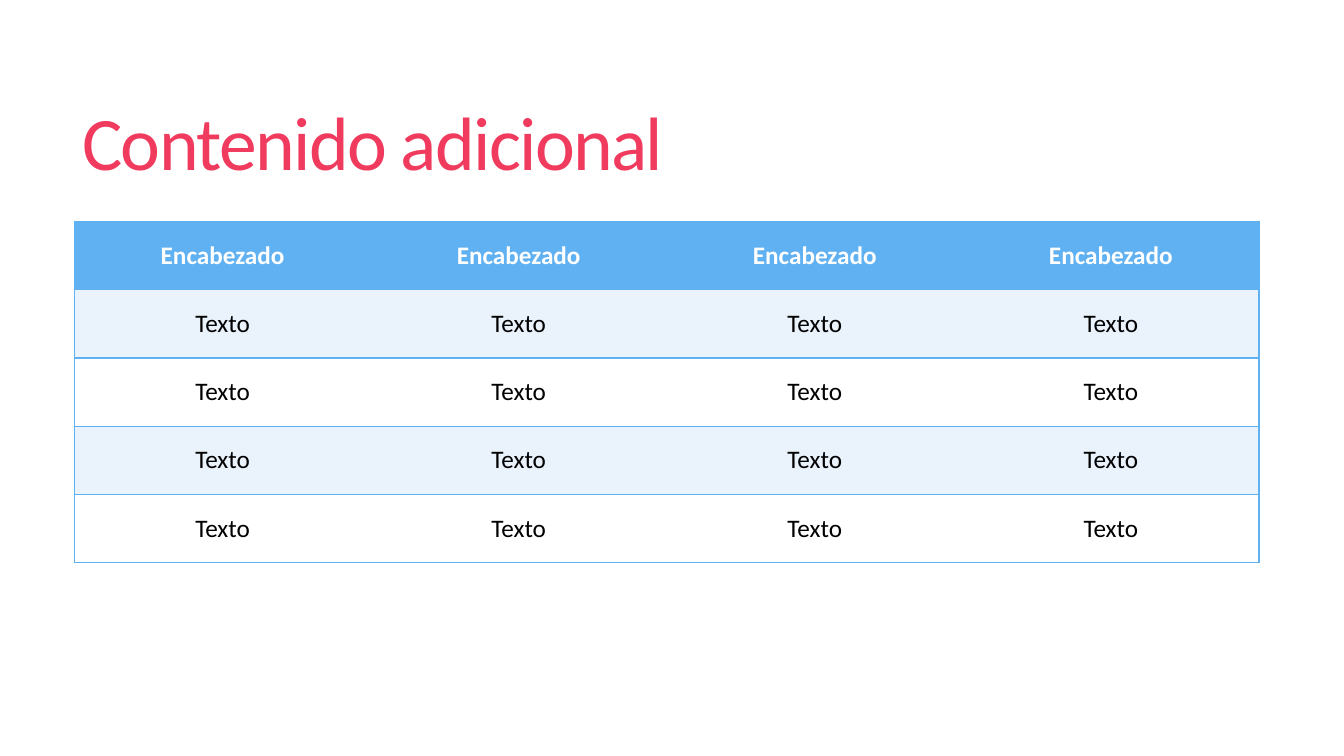
"""Build a slide with a title and a banded four-column table."""
from dataclasses import dataclass

from lxml.etree import SubElement
from pptx import Presentation
from pptx.dml.color import RGBColor
from pptx.enum.text import MSO_ANCHOR as Anchor, PP_ALIGN as Align
from pptx.oxml.ns import qn
from pptx.slide import Slide
from pptx.table import _Cell as Cell
from pptx.text.text import _Paragraph as Paragraph
from pptx.util import Emu, Pt

PX = 9525
FONT = "Calibri"
COLORS = {
    "title": "F03B5E",
    "header": "60B1F2",
    "band": "EAF2FC",
    "white": "FFFFFF",
    "black": "000000",
}
COLS = 4
COL_W, ROW_H = 282, 65


@dataclass(frozen=True)
class RowStyle:
    text: str
    fill: str
    color: str
    bold: bool = False


ROWS = [RowStyle("Encabezado", "header", "white", True)] + [
    RowStyle("Texto", fill, "black") for fill in ("band", "white") * 2
]


def px(n: int) -> Emu:
    return Emu(n * PX)


def rgb(name: str) -> RGBColor:
    return RGBColor.from_string(COLORS[name])


def style_text(p: Paragraph, size: int, color: str, bold: bool = False) -> None:
    for r in p.runs:
        r.font.name = FONT
        r.font.size = Pt(size)
        r.font.bold = bold
        r.font.color.rgb = rgb(color)


def add_title(s: Slide, text: str) -> None:
    tf = s.shapes.add_textbox(px(69), px(53), px(1131), px(174)).text_frame
    tf.word_wrap = True
    tf.vertical_anchor = Anchor.MIDDLE
    tf.text = text
    p = tf.paragraphs[0]
    p.line_spacing = 0.85
    style_text(p, 54, "title")
    p.runs[0].font._element.set("spc", "-120")


def set_borders(cell: Cell, visible: str) -> None:
    tc_pr = cell._tc.get_or_add_tcPr()
    for side in "LRTB":
        ln = SubElement(tc_pr, qn(f"a:ln{side}"), w=str(Pt(1)))
        if side in visible:
            fill = SubElement(ln, qn("a:solidFill"))
            SubElement(fill, qn("a:srgbClr"), val=COLORS["header"])
        else:
            SubElement(ln, qn("a:noFill"))


def fill_cell(cell: Cell, row: RowStyle, borders: str) -> None:
    set_borders(cell, borders)
    cell.fill.solid()
    cell.fill.fore_color.rgb = rgb(row.fill)
    cell.vertical_anchor = Anchor.MIDDLE
    cell.text_frame.text = row.text
    p = cell.text_frame.paragraphs[0]
    p.alignment = Align.CENTER
    style_text(p, 18, row.color, row.bold)


def add_grid(s: Slide, rows: list[RowStyle]) -> None:
    table = s.shapes.add_table(
        len(rows), COLS, px(71), px(211), px(COLS * COL_W), px(len(rows) * ROW_H)
    ).table
    for i, row in enumerate(rows):
        for j in range(COLS):
            edge = {0: "L", COLS - 1: "R"}.get(j, "")
            fill_cell(table.cell(i, j), row, "TB" + edge)


def main() -> None:
    prs = Presentation()
    prs.slide_width, prs.slide_height = px(1280), px(720)
    s = prs.slides.add_slide(prs.slide_layouts[6])
    add_title(s, "Contenido adicional")
    add_grid(s, ROWS)
    prs.save("out.pptx")


if __name__ == "__main__":
    main()
